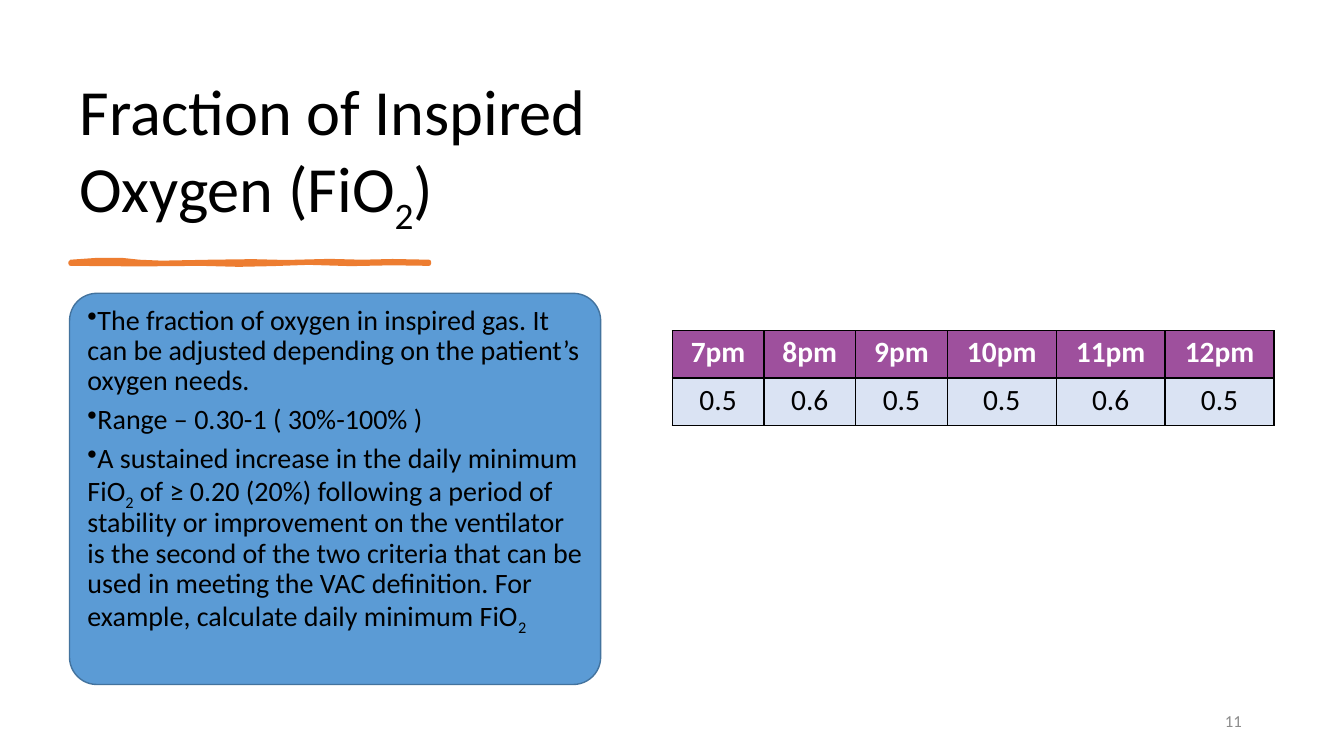
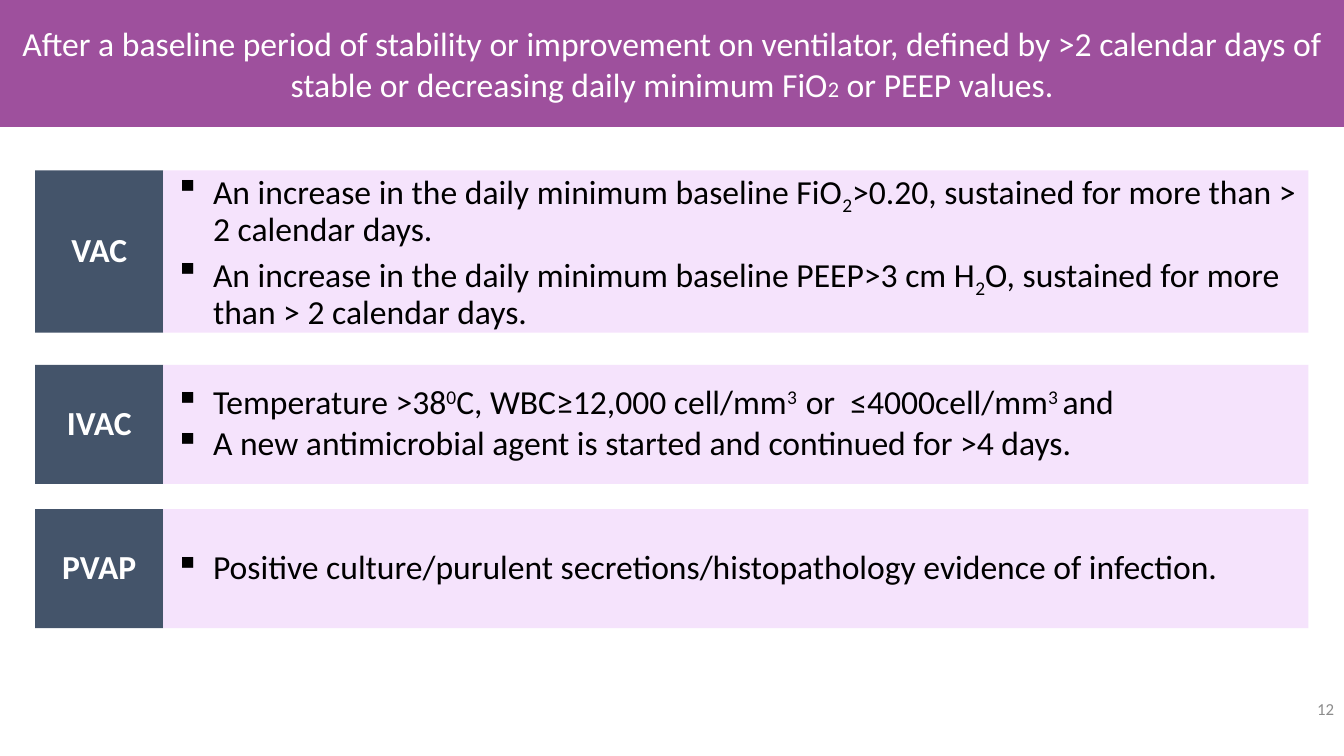
"""Build two slides on inspired oxygen and ventilator event criteria."""
from dataclasses import dataclass
from typing import NamedTuple

from pptx import Presentation
from pptx.dml.color import RGBColor
from pptx.enum.shapes import MSO_SHAPE as Shape
from pptx.enum.text import MSO_ANCHOR as Anchor, MSO_AUTO_SIZE as AutoSize, PP_ALIGN as Align
from pptx.oxml.xmlchemy import OxmlElement
from pptx.util import Pt


@dataclass(frozen=True)
class Theme:
    font: str = "Calibri"
    black: str = "000000"
    white: str = "FFFFFF"
    purple: str = "9E509D"
    lilac: str = "F5E0FC"
    slate: str = "44546A"
    orange: str = "ED7D31"
    blue: str = "5B9BD5"
    blue_edge: str = "43739E"
    pale_blue: str = "DAE3F3"
    grey: str = "8C8C8C"
    title: float = 46
    criteria: float = 24
    cell: float = 21
    body: float = 20
    small_digit: float = 16
    number: float = 12


class Part(NamedTuple):
    text: str
    baseline: int = 0
    size: float = 0


THEME = Theme()
SUB_2 = Part("2", baseline=-25000)
INSETS = (7.2, 3.6, 7.2, 3.6)

FIO2_TITLE = ["Fraction of Inspired Oxygen (FiO", SUB_2, ")"]
FIO2_POINTS = [
    ["The fraction of oxygen in inspired gas. It can be adjusted depending on "
     "the patient’s oxygen needs."],
    ["Range – 0.30-1 ( 30%-100% )"],
    ["A sustained increase in the daily minimum FiO", SUB_2,
     " of ≥ 0.20 (20%) following a period of stability or improvement on the "
     "ventilator is the second of the two criteria that can be used in meeting "
     "the VAC definition. For example, calculate daily minimum FiO", SUB_2],
]
HOURLY_FIO2 = [
    ("7pm", "8pm", "9pm", "10pm", "11pm", "12pm"),
    ("0.5", "0.6", "0.5", "0.5", "0.6", "0.5"),
]
STROKE = [
    (0, 0), (20, -1.4), (36, -1.4), (49, 0), (65, 0.7), (100, 0), (130, -0.4),
    (154, 0.2), (185, -0.6), (208, 0), (230, -0.5), (256, 0), (256, 1.4),
    (230, 1), (200, 1.6), (170, 0.7), (144, 1.6), (120, 2.1), (93, 1.4),
    (50, 1.8), (0, 1.4),
]
BASELINE_TITLE = [
    "After a baseline period of stability or improvement on ventilator, defined "
    "by >2 calendar days of stable or decreasing daily minimum FiO",
    Part("2", size=THEME.small_digit), " or PEEP values.",
]
CRITERIA = [
    ("VAC", 121.7, 116, [
        ["An increase in the daily minimum baseline FiO", SUB_2,
         ">0.20, sustained for more than > 2 calendar days."],
        ["An increase in the daily minimum baseline PEEP>3 cm H", SUB_2,
         "O, sustained for more than > 2 calendar days."],
    ]),
    ("IVAC", 260.6, 85, [
        ["Temperature >38", Part("0", 30000), "C, WBC≥12,000 cell/mm",
         Part("3  ", 30000), "or  ≤4000cell/mm", Part("3 ", 30000), "and"],
        ["A new antimicrobial agent is started and continued for >4 days."],
    ]),
    ("PVAP", 363.6, 85, [
        ["Positive culture/purulent secretions/histopathology evidence of infection."],
    ]),
]


def points(*lengths):
    return [Pt(length) for length in lengths]


def paint(target, color):
    target.fill.solid()
    target.fill.fore_color.rgb = RGBColor.from_string(color)


def add_child(parent, tag, **attributes):
    child = OxmlElement(tag)
    for name, value in attributes.items():
        child.set(name, str(value))
    parent.append(child)
    return child


def write_paragraph(paragraph, parts, size, color, bold=False, align=Align.LEFT,
                    spacing=1.0, after=0, bullet=None, hang=(0, 0)):
    paragraph.alignment = align
    paragraph.line_spacing = spacing
    paragraph.space_before, paragraph.space_after = Pt(0), Pt(after)
    if bullet:
        properties = paragraph._p.get_or_add_pPr()
        properties.set("marL", str(Pt(hang[0])))
        properties.set("indent", str(Pt(hang[1])))
        add_child(properties, "a:buChar", char=bullet)
    font = paragraph.font
    font.name, font.size, font.bold = THEME.font, Pt(size), bold
    font.color.rgb = RGBColor.from_string(color)
    for part in parts:
        part = Part(part) if isinstance(part, str) else part
        run = paragraph.add_run()
        run.text = part.text
        if part.baseline:
            run._r.get_or_add_rPr().set("baseline", str(part.baseline))
        if part.size:
            run.font.size = Pt(part.size)


def write_text(frame, paragraphs, size, color, anchor=Anchor.MIDDLE,
               insets=INSETS, **style):
    frame.word_wrap = True
    frame.auto_size = AutoSize.NONE
    frame.vertical_anchor = anchor
    (frame.margin_left, frame.margin_top,
     frame.margin_right, frame.margin_bottom) = points(*insets)
    for index, parts in enumerate(paragraphs):
        paragraph = frame.add_paragraph() if index else frame.paragraphs[0]
        write_paragraph(paragraph, parts, size, color, **style)


def add_titled_slide(deck, box, parts, size, color, **style):
    slide = deck.slides.add_slide(deck.slide_layouts[5])
    title = slide.shapes.title
    title.left, title.top, title.width, title.height = points(*box)
    write_text(title.text_frame, [parts], size, color, **style)
    return slide


def add_panel(slide, kind, box, fill, edge=None):
    panel = slide.shapes.add_shape(kind, *points(*box))
    panel.shadow.inherit = False
    paint(panel, fill)
    if edge:
        panel.line.color.rgb = RGBColor.from_string(edge)
        panel.line.width = Pt(1)
    else:
        panel.line.fill.background()
    return panel


def add_slide_number(slide, number, box):
    footer = slide.shapes.add_textbox(*points(*box))
    write_text(footer.text_frame, [[str(number)]], THEME.number, THEME.grey,
               align=Align.RIGHT)


def add_brush_stroke(slide, left, top):
    outline = [(Pt(left + x), Pt(top + y)) for x, y in STROKE]
    builder = slide.shapes.build_freeform(*outline[0])
    builder.add_line_segments(outline[1:], close=True)
    stroke = builder.convert_to_shape()
    stroke.shadow.inherit = False
    paint(stroke, THEME.orange)
    stroke.line.color.rgb = RGBColor.from_string(THEME.orange)
    stroke.line.width = Pt(3)


def add_borders(cell):
    properties = cell._tc.get_or_add_tcPr()
    for side in ("L", "R", "T", "B"):
        border = add_child(properties, f"a:ln{side}", w=Pt(1))
        add_child(add_child(border, "a:solidFill"), "a:srgbClr", val=THEME.black)


def add_hourly_table(slide, left, top):
    widths = [65.5] * 3 + [77.8] * 3
    row_height = 33.8
    table = slide.shapes.add_table(
        len(HOURLY_FIO2), len(widths),
        *points(left, top, sum(widths), row_height * len(HOURLY_FIO2))).table
    table.horz_banding = False
    for column, width in zip(table.columns, widths):
        column.width = Pt(width)
    looks = [(THEME.purple, THEME.white, True), (THEME.pale_blue, THEME.black, False)]
    for row, values, (fill, color, bold) in zip(table.rows, HOURLY_FIO2, looks):
        row.height = Pt(row_height)
        for cell, value in zip(row.cells, values):
            add_borders(cell)
            paint(cell, fill)
            (cell.margin_left, cell.margin_top,
             cell.margin_right, cell.margin_bottom) = points(6.5, 3, 6.5, 3)
            write_paragraph(cell.text_frame.paragraphs[0], [value], THEME.cell,
                            color, bold=bold, align=Align.CENTER)


def add_criterion(slide, name, top, height, findings):
    left, label_width, findings_width = 25.2, 91.4, 818
    label = add_panel(slide, Shape.RECTANGLE, (left, top, label_width, height),
                      THEME.slate)
    write_text(label.text_frame, [[name]], THEME.criteria, THEME.white,
               insets=(1.4, 0, 1.4, 0), bold=True, align=Align.CENTER, spacing=0.9)
    panel = add_panel(slide, Shape.RECTANGLE,
                      (left + label_width, top, findings_width, height), THEME.lilac)
    tint = panel.fill._xPr.find(".//{*}srgbClr")
    add_child(tint, "a:alpha", val=90000)
    write_text(panel.text_frame, findings, THEME.criteria, THEME.black,
               insets=(8.6, 5, 5, 5), spacing=0.9, after=3.5,
               bullet="▪", hang=(27, -27))


def build_fio2_slide(deck):
    left, width = 49.7, 379.4
    slide = add_titled_slide(deck, (left, 50.4, width, 116.6), FIO2_TITLE,
                             THEME.title, THEME.black, anchor=Anchor.BOTTOM,
                             spacing=0.9)
    add_brush_stroke(slide, 50.4, 187)
    panel = add_panel(slide, Shape.ROUNDED_RECTANGLE, (left, 209.5, width, 279.4),
                      THEME.blue, THEME.blue_edge)
    panel.adjustments[0] = 0.07
    write_text(panel.text_frame, FIO2_POINTS, THEME.body, THEME.black,
               anchor=Anchor.TOP, spacing=0.9, after=6, bullet="•", hang=(0, -18))
    add_hourly_table(slide, 480.2, 236.2)
    add_slide_number(slide, 11, (678.2, 500.4, 216, 28.8))


def build_criteria_slide(deck):
    slide = add_titled_slide(deck, (0, 0, 960, 90.7), BASELINE_TITLE,
                             THEME.criteria, THEME.white, align=Align.CENTER)
    paint(slide.shapes.title, THEME.purple)
    for criterion in CRITERIA:
        add_criterion(slide, *criterion)
    add_slide_number(slide, 12, (909.6, 488.9, 50.4, 34.6))


def main():
    deck = Presentation()
    deck.slide_width, deck.slide_height = points(960, 540)
    build_fio2_slide(deck)
    build_criteria_slide(deck)
    deck.save("out.pptx")


if __name__ == "__main__":
    main()
